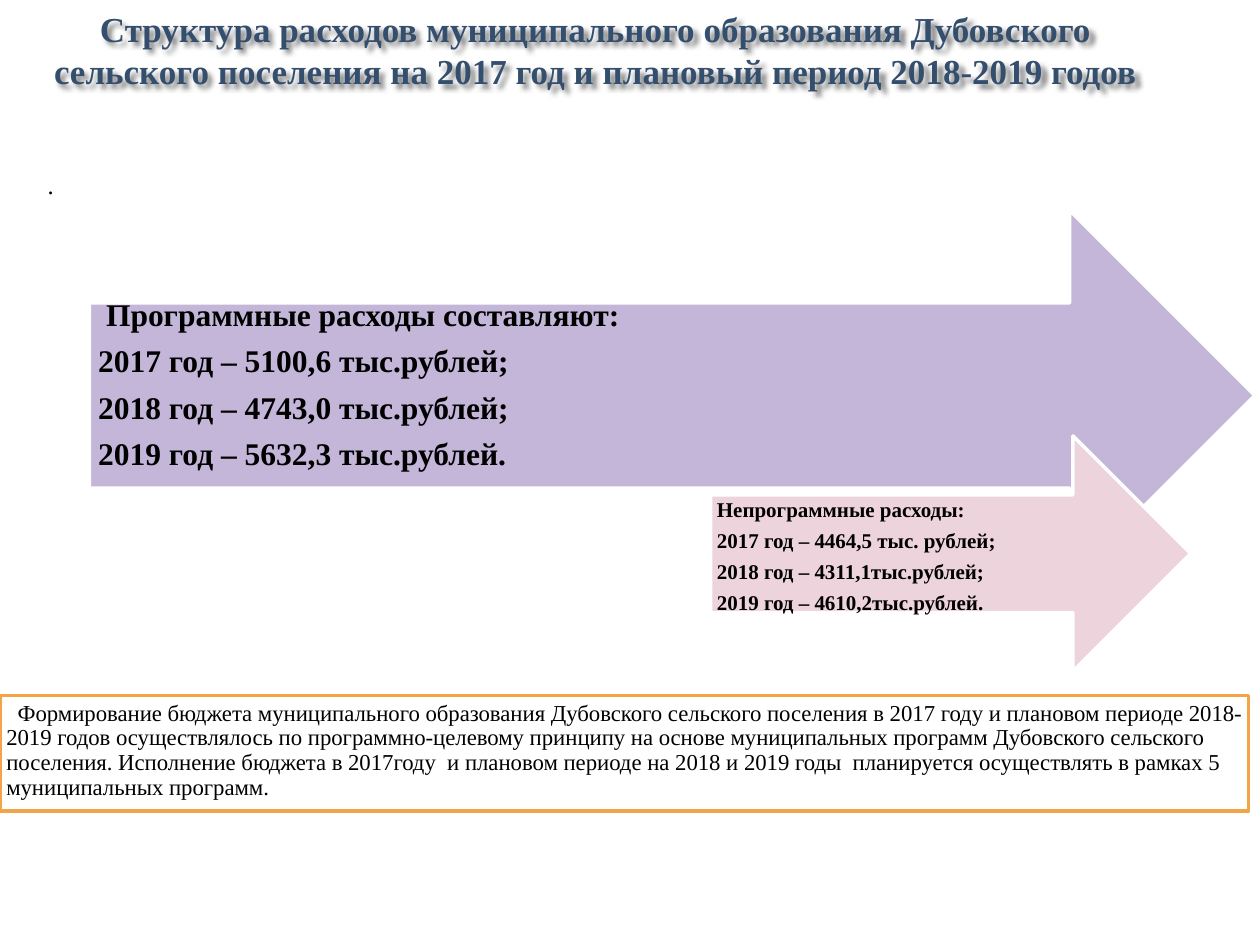
from dataclasses import dataclass

from lxml import etree
from pptx import Presentation
from pptx import util as u
from pptx.dml.color import RGBColor
from pptx.enum import shapes, text
from pptx.oxml.ns import qn

Pt = u.Pt
FONT = "Times New Roman"
BLACK = RGBColor(0x00, 0x00, 0x00)
WHITE = RGBColor(0xFF, 0xFF, 0xFF)
NAVY = RGBColor(0x34, 0x4E, 0x6D)
LILAC = RGBColor(0xC4, 0xB6, 0xD9)
ROSE = RGBColor(0xEC, 0xD3, 0xDC)
ORANGE = RGBColor(0xF3, 0xA4, 0x47)
MIDDLE = text.MSO_ANCHOR.MIDDLE
ARROW = shapes.MSO_SHAPE.RIGHT_ARROW


@dataclass
class Area:
    left: float
    top: float
    width: float
    height: float

    def lengths(self) -> tuple:
        return tuple(Pt(v) for v in (self.left, self.top, self.width, self.height))


@dataclass
class Wording:
    lines: list[str]
    size: float
    color: RGBColor = BLACK
    bold: bool = False
    align: text.PP_ALIGN = text.PP_ALIGN.LEFT
    anchor: text.MSO_ANCHOR = text.MSO_ANCHOR.TOP
    insets: tuple = (7.2, 3.6, 7.2, 3.6)
    line_spacing: float = 1.0
    space_after: float = 0
    first_indent: float = 0


@dataclass
class ExpenseArrow:
    outline: Area
    fill: RGBColor
    label: Area
    wording: Wording


def set_all(target, values: dict) -> None:
    for name, value in values.items():
        setattr(target, name, value)


def write(box, wording: Wording) -> None:
    frame = box.text_frame
    sides = ("left", "top", "right", "bottom")
    margins = {f"margin_{s}": Pt(v) for s, v in zip(sides, wording.insets)}
    set_all(frame, {"word_wrap": True, "vertical_anchor": wording.anchor, **margins})
    for index, line in enumerate(wording.lines):
        para = frame.add_paragraph() if index else frame.paragraphs[0]
        set_all(para, {
            "alignment": wording.align,
            "line_spacing": wording.line_spacing,
            "space_after": Pt(wording.space_after),
        })
        if index == 0 and wording.first_indent:
            para._p.get_or_add_pPr().set("indent", str(Pt(wording.first_indent)))
        span = para.add_run()
        span.text = line
        set_all(span.font, {"name": FONT, "size": Pt(wording.size), "bold": wording.bold})
        span.font.color.rgb = wording.color


def add_text(page, area: Area, wording: Wording):
    box = page.shapes.add_textbox(*area.lengths())
    write(box, wording)
    return box


def add_figure(page, kind, area: Area, fill: RGBColor, line: RGBColor):
    figure = page.shapes.add_shape(kind, *area.lengths())
    figure.shadow.inherit = False
    figure.fill.solid()
    figure.fill.fore_color.rgb = fill
    figure.line.color.rgb = line
    figure.line.width = Pt(2)
    return figure


def add_soft_shadow(box) -> None:
    """Give an unfilled box a blurred shadow, which falls behind its text."""
    effects = etree.SubElement(box._element.spPr, qn("a:effectLst"))
    shadow = etree.SubElement(effects, qn("a:outerShdw"), {
        "blurRad": str(Pt(3)), "dist": str(Pt(3)), "dir": "2700000",
        "algn": "tl", "rotWithShape": "0"})
    color = etree.SubElement(shadow, qn("a:srgbClr"), val="000000")
    etree.SubElement(color, qn("a:alpha"), val="50000")


TITLE = Wording(
    ["Структура расходов муниципального образования Дубовского "
     "сельского поселения на 2017 год и плановый период 2018-2019 годов"],
    20, NAVY, True, text.PP_ALIGN.CENTER, MIDDLE)

PROGRAM = ExpenseArrow(
    Area(51.1, 120.2, 666, 211.7), LILAC, Area(51.1, 173.5, 613.4, 105.8),
    Wording(
        ["Программные расходы составляют:",
         "2017 год – 5100,6 тыс.рублей;",
         "2018 год – 4743,0 тыс.рублей;",
         "2019 год – 5632,3 тыс.рублей."],
        18, bold=True, anchor=MIDDLE, insets=(5, 5, 20, 16.6),
        line_spacing=0.9, space_after=7.1, first_indent=4.5))

NON_PROGRAM = ExpenseArrow(
    Area(406.1, 249.1, 274.3, 134.6), ROSE, Area(406.1, 291.6, 240.5, 67),
    Wording(
        ["Непрограммные расходы:",
         "2017 год – 4464,5 тыс. рублей;",
         "2018 год – 4311,1тыс.рублей;",
         "2019 год – 4610,2тыс.рублей."],
        12, bold=True, anchor=MIDDLE, insets=(3.6, 3.6, 20, 16.6),
        line_spacing=0.9, space_after=4.7))

NOTE = Wording(
    ["Формирование бюджета муниципального образования Дубовского сельского "
     "поселения в 2017 году и плановом периоде 2018-2019 годов осуществлялось "
     "по программно-целевому принципу на основе муниципальных программ "
     "Дубовского сельского поселения. Исполнение бюджета в 2017году  и плановом "
     "периоде на 2018 и 2019 годы  планируется осуществлять в рамках 5 "
     "муниципальных программ."],
    13, insets=(3.6,) * 4, line_spacing=0.9, first_indent=6.5)


def add_arrow(page, arrow: ExpenseArrow) -> None:
    add_figure(page, ARROW, arrow.outline, arrow.fill, WHITE)
    add_text(page, arrow.label, arrow.wording)


def main() -> None:
    deck = Presentation()
    set_all(deck, {"slide_width": Pt(720), "slide_height": Pt(540)})
    page = deck.slides.add_slide(deck.slide_layouts[6])

    add_soft_shadow(add_text(page, Area(9.4, 0.7, 661.7, 55.4), TITLE))
    add_arrow(page, PROGRAM)
    note = add_figure(page, shapes.MSO_SHAPE.RECTANGLE,
                      Area(0, 397.4, 713.5, 66.2), WHITE, ORANGE)
    write(note, NOTE)
    add_arrow(page, NON_PROGRAM)
    add_text(page, Area(20.2, 93.6, 321.1, 24.5), Wording(["."], 14))

    deck.save("out.pptx")


if __name__ == "__main__":
    main()
